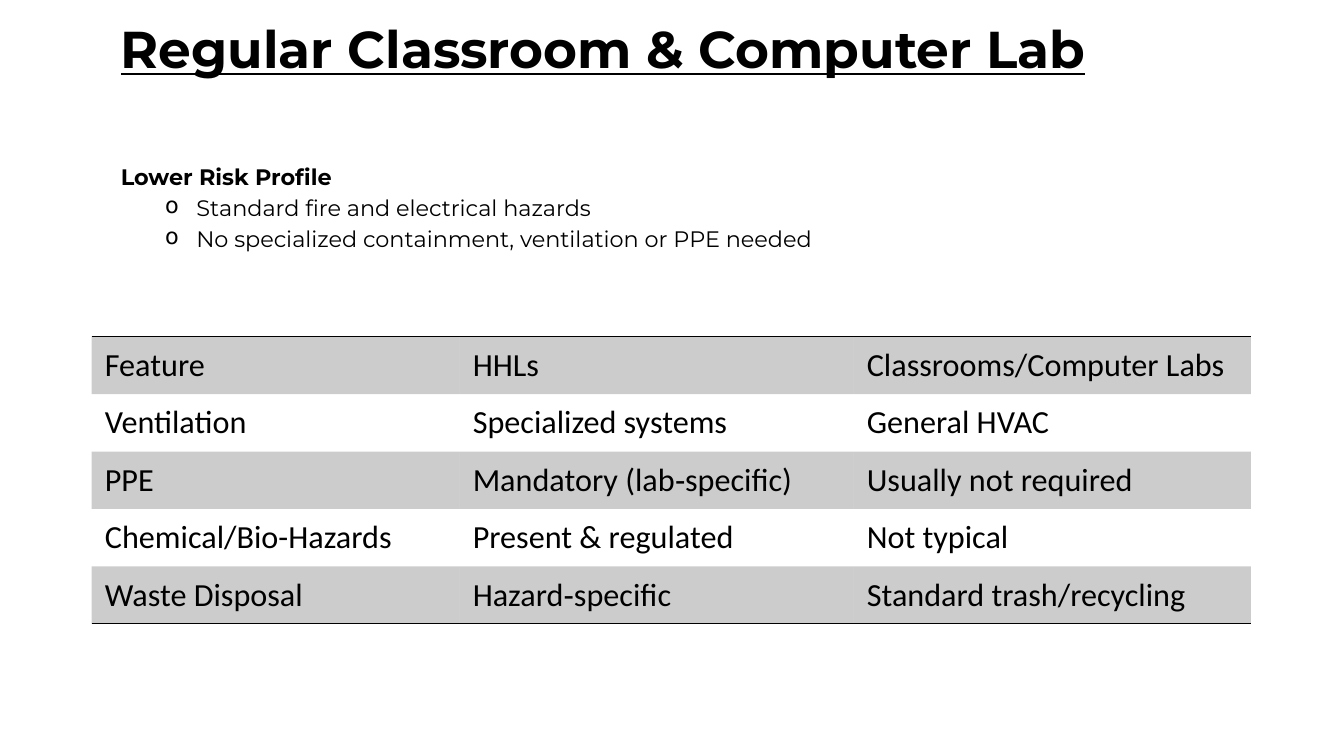
from dataclasses import dataclass

from lxml import etree
from pptx import Presentation
from pptx.dml.color import RGBColor
from pptx.enum.text import MSO_ANCHOR as Anchor
from pptx.oxml.ns import qn
from pptx.slide import Slide
from pptx.table import _Cell as Cell
from pptx.text.text import TextFrame, _Paragraph as Paragraph
from pptx.util import Pt

BLACK = RGBColor(0, 0, 0)
BAND_ALPHA = "20000"
NO_STYLE = "{2D5ABB26-0587-4C30-8999-92F81FD0307C}"
HEADING_FONT, TABLE_FONT = "Montserrat", "Calibri"

LEFT, WIDTH = 79.2, 801.4
TABLE_LEFT, TABLE_TOP = 65.5, 240.5
COLUMN_WIDTHS = (262.8, 281.5, 283.7)
ROW_HEIGHT = 41.04


@dataclass(frozen=True)
class RiskLine:
    text: str
    heading: bool = False


RISK_LINES = (
    RiskLine("Lower Risk Profile", heading=True),
    RiskLine("Standard fire and electrical hazards"),
    RiskLine("No specialized containment, ventilation or PPE needed"),
)

FEATURE_ROWS = (
    ("Feature", "HHLs", "Classrooms/Computer Labs"),
    ("Ventilation", "Specialized systems", "General HVAC"),
    ("PPE", "Mandatory (lab‑specific)", "Usually not required"),
    ("Chemical/Bio-Hazards", "Present & regulated", "Not typical"),
    ("Waste Disposal", "Hazard‑specific", "Standard trash/recycling"),
)


def write(p: Paragraph, text: str, *, size: float, font: str = HEADING_FONT,
          bold: bool = False, underline: bool = False) -> None:
    r = p.add_run()
    r.text = text
    r.font.size, r.font.name = Pt(size), font
    r.font.bold, r.font.underline = bold, underline
    r.font.color.rgb = BLACK


def add_text_frame(s: Slide, top: float, height: float) -> TextFrame:
    tf = s.shapes.add_textbox(Pt(LEFT), Pt(top), Pt(WIDTH), Pt(height)).text_frame
    tf.word_wrap = True
    return tf


def add_bullet(p: Paragraph) -> None:
    pPr = p._p.get_or_add_pPr()
    pPr.set("lvl", "1")
    pPr.set("marL", str(Pt(54)))
    pPr.set("indent", str(Pt(-22.3)))
    etree.SubElement(pPr, qn("a:buChar"), char="o")


def add_border(cell: Cell, side: str) -> None:
    """Rule one side of a cell: lnT is the top, lnB the bottom."""
    ln = etree.Element(qn(f"a:{side}"), w=str(Pt(1)))
    fill = etree.SubElement(ln, qn("a:solidFill"))
    etree.SubElement(fill, qn("a:srgbClr"), val=str(BLACK))
    cell._tc.get_or_add_tcPr().insert(0, ln)


def fill_cell(cell: Cell, banded: bool) -> None:
    if not banded:
        cell.fill.background()
        return
    cell.fill.solid()
    cell.fill.fore_color.rgb = BLACK
    color = cell._tc.tcPr.find(f"{qn('a:solidFill')}/{qn('a:srgbClr')}")
    etree.SubElement(color, qn("a:alpha"), val=BAND_ALPHA)


def add_title(s: Slide) -> None:
    p = add_text_frame(s, 13.7, 87.8).paragraphs[0]
    p.line_spacing = 0.9
    write(p, "Regular Classroom & Computer Lab", size=37, bold=True, underline=True)


def add_risk_profile(s: Slide) -> None:
    tf = add_text_frame(s, 115.2, 85)
    for i, line in enumerate(RISK_LINES):
        p = tf.add_paragraph() if i else tf.paragraphs[0]
        if not line.heading:
            add_bullet(p)
            p.space_before = Pt(5)
        p.line_spacing = 0.9
        write(p, line.text, size=16, bold=line.heading)


def add_feature_table(s: Slide) -> None:
    last = len(FEATURE_ROWS) - 1
    table = s.shapes.add_table(
        len(FEATURE_ROWS), len(COLUMN_WIDTHS), Pt(TABLE_LEFT), Pt(TABLE_TOP),
        Pt(sum(COLUMN_WIDTHS)), Pt(ROW_HEIGHT * len(FEATURE_ROWS))).table
    table._tbl.tblPr.find(qn("a:tableStyleId")).text = NO_STYLE
    table.first_row = table.horz_banding = False
    for column, width in zip(table.columns, COLUMN_WIDTHS):
        column.width = Pt(width)
    for i, texts in enumerate(FEATURE_ROWS):
        table.rows[i].height = Pt(ROW_HEIGHT)
        for j, text in enumerate(texts):
            cell = table.cell(i, j)
            cell.vertical_anchor = Anchor.MIDDLE
            cell.margin_left = cell.margin_right = Pt(9.4)
            cell.margin_top = cell.margin_bottom = Pt(4.5)
            write(cell.text_frame.paragraphs[0], text, size=23, font=TABLE_FONT)
            fill_cell(cell, banded=i % 2 == 0)
            if i == 0:
                add_border(cell, "lnT")
            elif i == last:
                add_border(cell, "lnB")


def main() -> None:
    prs = Presentation()
    prs.slide_width, prs.slide_height = Pt(960), Pt(540)
    s = prs.slides.add_slide(prs.slide_layouts[6])
    add_title(s)
    add_risk_profile(s)
    add_feature_table(s)
    prs.save("out.pptx")


if __name__ == "__main__":
    main()
